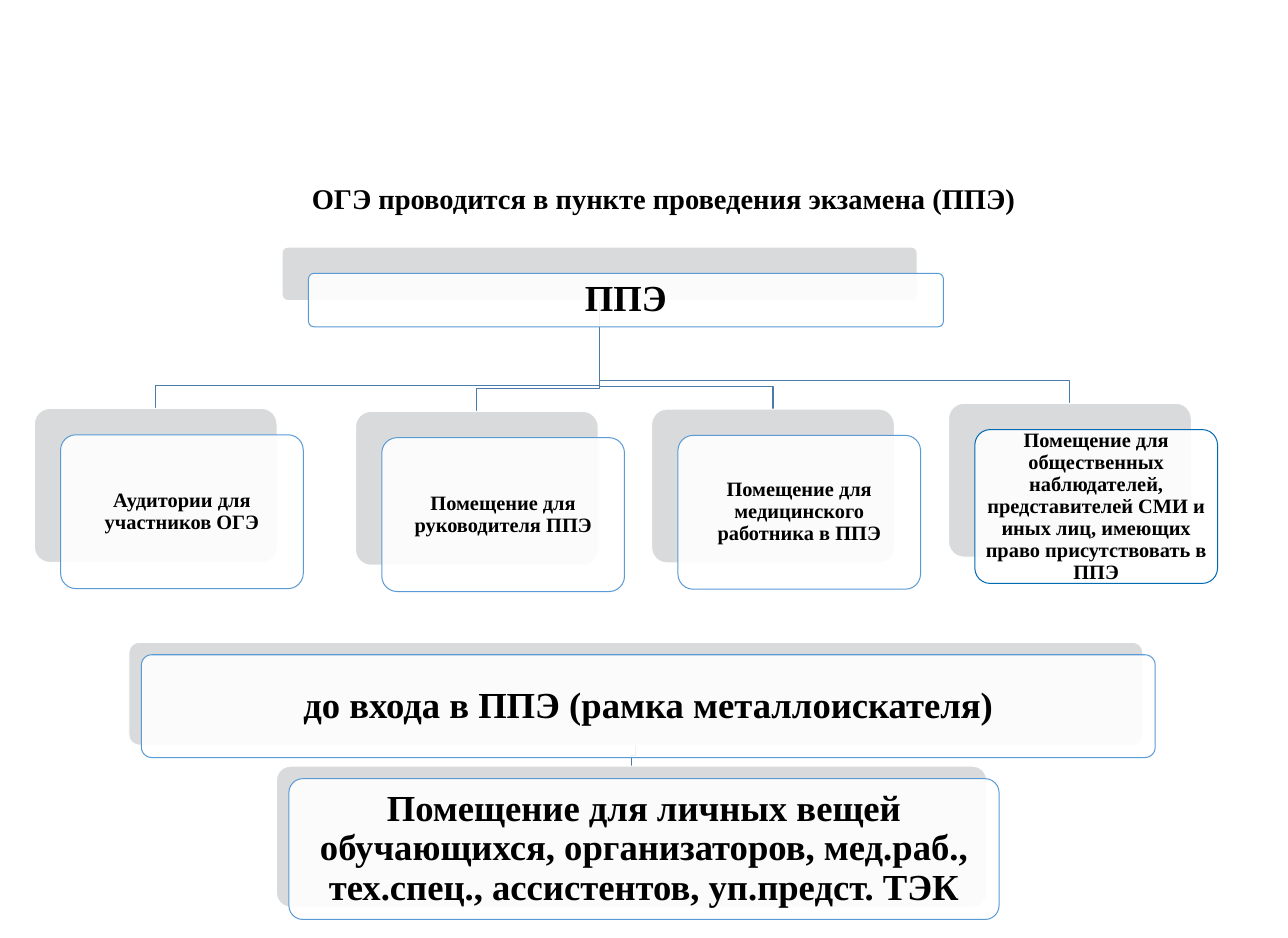
from lxml import etree
from pptx import Presentation
from pptx import util as u
from pptx.dml.color import RGBColor
from pptx.enum import shapes, text
from pptx.oxml import ns

BLACK = RGBColor(0x00, 0x00, 0x00)
WHITE = RGBColor(0xFF, 0xFF, 0xFF)
GREY = RGBColor(0xD9, 0xDA, 0xDB)
BLUE = RGBColor(0x5B, 0x9B, 0xD5)
DEEP = RGBColor(0x00, 0x6A, 0xB3)
STEEL = RGBColor(0x49, 0x7C, 0xAB)

TITLE = "ОГЭ проводится в пункте проведения экзамена (ППЭ)"
ROOT = (9.78, 8.56, 22, 1.85)
ENTRY = (4.47, 22.25, 35.13, 3.56)
STORE = (9.58, 26.54, 24.61, 4.88)
ROOM_W, ROOM_H = 8.41, 5.33
ROOMS = [
    (1.19, 14.15, "Аудитории для участников ОГЭ", BLUE),
    (12.32, 14.25, "Помещение для руководителя ППЭ", BLUE),
    (22.58, 14.17, "Помещение для медицинского работника в ППЭ", BLUE),
    (32.87, 13.97, "Помещение для общественных наблюдателей, представителей СМИ "
     "и иных лиц, имеющих право присутствовать в ППЭ", DEEP),
]


def put(item, values):
    for name, value in values.items():
        setattr(item, name, value)


def write(shape, words, size, inset):
    frame = shape.text_frame
    pad = u.Cm(inset)
    put(frame, {"word_wrap": True, "vertical_anchor": text.MSO_ANCHOR.MIDDLE,
                "margin_left": pad, "margin_right": pad,
                "margin_top": pad, "margin_bottom": pad})
    para = frame.paragraphs[0]
    put(para, {"text": words, "alignment": text.PP_ALIGN.CENTER, "line_spacing": 0.9})
    put(para.font, {"name": "Times New Roman", "size": u.Pt(size), "bold": True})
    para.font.color.rgb = BLACK


def plate(slide, box, fill, edge):
    shape = slide.shapes.add_shape(shapes.MSO_SHAPE.ROUNDED_RECTANGLE, *map(u.Cm, box))
    shape.adjustments[0] = 0.1
    shape.shadow.inherit = False
    shape.fill.solid()
    shape.fill.fore_color.rgb = fill
    shape.line.color.rgb = edge
    shape.line.width = u.Pt(1)
    return shape


def card(slide, box, shift, words, size, inset, edge=BLUE):
    """Grey plate with a slightly see-through white plate shifted over it."""
    plate(slide, box, GREY, WHITE)
    left, top, width, height = box
    front = plate(slide, (left + shift, top + shift, width, height), WHITE, edge)
    color = front.fill._xPr.find(".//" + ns.qn("a:srgbClr"))
    etree.SubElement(color, ns.qn("a:alpha"), val="90000")
    write(front, words, size, inset)


def link(slide, upper, lower):
    """Elbow line from the bottom centre of one box to the top centre of another."""
    x1, y1 = upper[0] + upper[2] / 2, upper[1] + upper[3]
    x2, y2 = lower[0] + lower[2] / 2, lower[1]
    bend = y2 - min(0.78, (y2 - y1) / 2)
    start, *rest = [(u.Cm(x), u.Cm(y))
                    for x, y in ((x1, y1), (x1, bend), (x2, bend), (x2, y2))]
    build = slide.shapes.build_freeform(*start)
    build.add_line_segments(rest, close=False)
    line = build.convert_to_shape()
    line.shadow.inherit = False
    line.fill.background()
    line.line.color.rgb = STEEL
    line.line.width = u.Pt(1)


def main():
    deck = Presentation()
    put(deck, {"slide_width": u.Cm(44.63), "slide_height": u.Cm(32.49)})
    slide = deck.slides.add_slide(deck.slide_layouts[6])

    title = slide.shapes.add_textbox(u.Cm(3.73), u.Cm(5.84), u.Cm(38.51), u.Cm(2.2))
    write(title, TITLE, 28, 0.25)

    boxes = [(left, top, ROOM_W, ROOM_H) for left, top, _, _ in ROOMS]
    for box in reversed(boxes):
        link(slide, ROOT, box)
    card(slide, ROOT, 0.91, "ППЭ", 36, 0.38)
    for box, (_, _, words, edge) in zip(boxes, ROOMS):
        card(slide, box, 0.91, words, 20, 0.2, edge)

    link(slide, ENTRY, STORE)
    card(slide, ENTRY, 0.43, "до входа в ППЭ (рамка металлоискателя)", 36, 0.38)
    card(slide, STORE, 0.43, "Помещение для личных вещей обучающихся, организаторов, "
         "мед.раб., тех.спец., ассистентов, уп.предст. ТЭК", 36, 0.38)
    deck.save("out.pptx")


if __name__ == "__main__":
    main()
